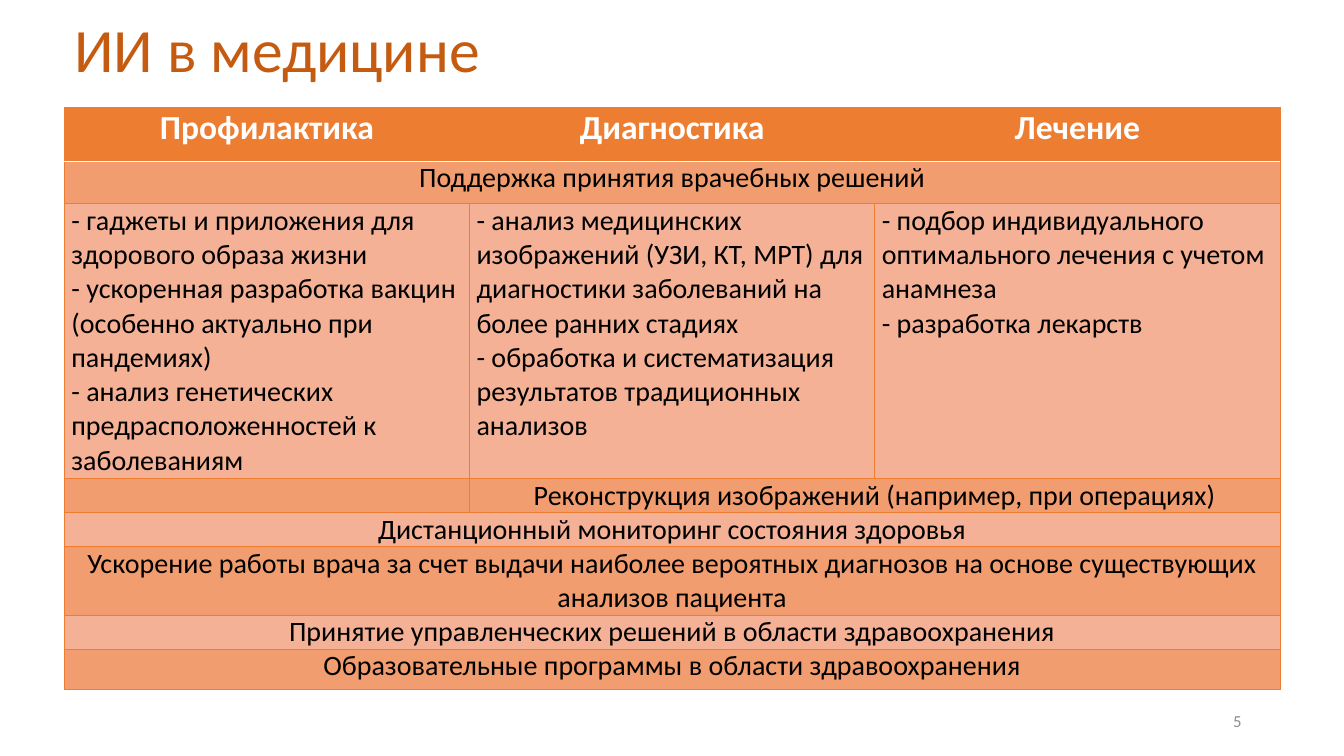
from lxml import etree
from pptx import Presentation
from pptx.dml.color import RGBColor
from pptx.enum.shapes import MSO_SHAPE
from pptx.enum.text import MSO_ANCHOR, PP_ALIGN
from pptx.oxml.ns import qn
from pptx.util import Pt

RECT = MSO_SHAPE.RECTANGLE
LEFT, CENTER, RIGHT = PP_ALIGN.LEFT, PP_ALIGN.CENTER, PP_ALIGN.RIGHT
MIDDLE, BOTTOM = MSO_ANCHOR.MIDDLE, MSO_ANCHOR.BOTTOM

ORANGE, DARK, LIGHT = "ED7D31", "F19D6F", "F4B195"
WHITE, BLACK, RUST, GRAY = "FFFFFF", "000000", "C55A11", "8C8C8C"

# Each row: height, fill, cells; a cell is (column span, paragraphs)
HEAD = [(1, ["Профилактика"]), (1, ["Диагностика"]), (1, ["Лечение"])]
ROWS = [
    (38.16, ORANGE, HEAD),
    (30.24, DARK, [(3, ["Поддержка принятия врачебных решений"])]),
    (196.4, LIGHT, [
        (1, ["- гаджеты и приложения для здорового образа жизни",
             "- ускоренная разработка вакцин (особенно актуально при пандемиях)",
             "- анализ генетических предрасположенностей к заболеваниям"]),
        (1, ["- анализ медицинских изображений (УЗИ, КТ, МРТ) для диагностики "
             "заболеваний на более ранних стадиях",
             "- обработка и систематизация результатов традиционных анализов"]),
        (1, ["- подбор индивидуального оптимального лечения с учетом анамнеза",
             "- разработка лекарств"])]),
    (24.4, DARK, [
        (1, [""]),
        (2, ["Реконструкция изображений (например, при операциях)"])]),
    (24.4, LIGHT, [(3, ["Дистанционный мониторинг состояния здоровья"])]),
    (48.8, DARK, [(3, ["Ускорение работы врача за счет выдачи наиболее вероятных "
                       "диагнозов на основе существующих анализов пациента"])]),
    (24.4, LIGHT, [(3, ["Принятие управленческих решений в области "
                        "здравоохранения"])]),
    (28.8, DARK, [(3, ["Образовательные программы в области здравоохранения"])]),
]


def color(code):
    return RGBColor.from_string(code)


class Deck:
    def __init__(self, font):
        self.font = font
        self.file = Presentation()
        self.file.slide_width, self.file.slide_height = Pt(960), Pt(540)
        self.slide = self.file.slides.add_slide(self.file.slide_layouts[6])

    def text(self, frame, lines, size, ink, align=LEFT, bold=False):
        frame.word_wrap = True
        for i, line in enumerate(lines):
            para = frame.add_paragraph() if i else frame.paragraphs[0]
            para.alignment = align
            para.font.size = Pt(size)
            if line:
                run = para.add_run()
                run.text = line
                run.font.name = self.font
                run.font.size = Pt(size)
                run.font.bold = bold
                run.font.color.rgb = color(ink)

    def title(self, box, text):
        shape = self.slide.shapes.add_shape(RECT, *map(Pt, box))
        shape.shadow.inherit = False
        shape.fill.solid()
        shape.fill.fore_color.rgb = color(WHITE)
        shape.line.fill.background()
        shape.text_frame.vertical_anchor = BOTTOM
        self.text(shape.text_frame, [text], 44, RUST)
        shape.text_frame.paragraphs[0].line_spacing = 0.9

    def number(self, box, text):
        frame = self.slide.shapes.add_textbox(*map(Pt, box)).text_frame
        frame.vertical_anchor = MIDDLE
        self.text(frame, [text], 12, GRAY, RIGHT)

    def border(self, cell, sides):
        """Draw cell edges; sides maps L, R, T, B in that order to colour and width."""
        props = cell._tc.get_or_add_tcPr()
        for i, (side, (ink, width)) in enumerate(sides.items()):
            line = etree.Element(qn("a:ln" + side), w=str(Pt(width)))
            fill = etree.SubElement(line, qn("a:solidFill"))
            etree.SubElement(fill, qn("a:srgbClr"), val=ink)
            props.insert(i, line)

    def cell(self, cell, fill, lines, head):
        cell.margin_left = cell.margin_right = Pt(5)
        cell.margin_top = cell.margin_bottom = 0
        cell.fill.solid()
        cell.fill.fore_color.rgb = color(fill)
        align = LEFT if len(lines) > 1 else CENTER
        size, ink = (24, WHITE) if head else (20, BLACK)
        self.text(cell.text_frame, lines, size, ink, align, head)
        sides = dict.fromkeys("LRTB", (ORANGE, 0.5))
        if head:
            sides["B"] = (WHITE, 1)
        self.border(cell, sides)

    def table(self, left, top, width, rows):
        count = len(rows[0][2])
        high = sum(row[0] for row in rows)
        grid = self.slide.shapes.add_table(
            len(rows), count, Pt(left), Pt(top), Pt(width), Pt(high)).table
        grid.first_row = grid.horz_banding = False
        for col in grid.columns:
            col.width = Pt(width / count)
        for r, (tall, fill, cells) in enumerate(rows):
            grid.rows[r].height = Pt(tall)
            c = 0
            for span, lines in cells:
                cell = grid.cell(r, c)
                if span > 1:
                    cell.merge(grid.cell(r, c + span - 1))
                self.cell(cell, fill, lines, r == 0)
                c += span


def main():
    deck = Deck("Calibri")
    deck.number((678, 500.4, 216, 28.8), "5")
    deck.title((46, 15.8, 868.3, 49), "ИИ в медицине")
    deck.table(46, 77, 868.3, ROWS)
    deck.file.save("out.pptx")


if __name__ == "__main__":
    main()
